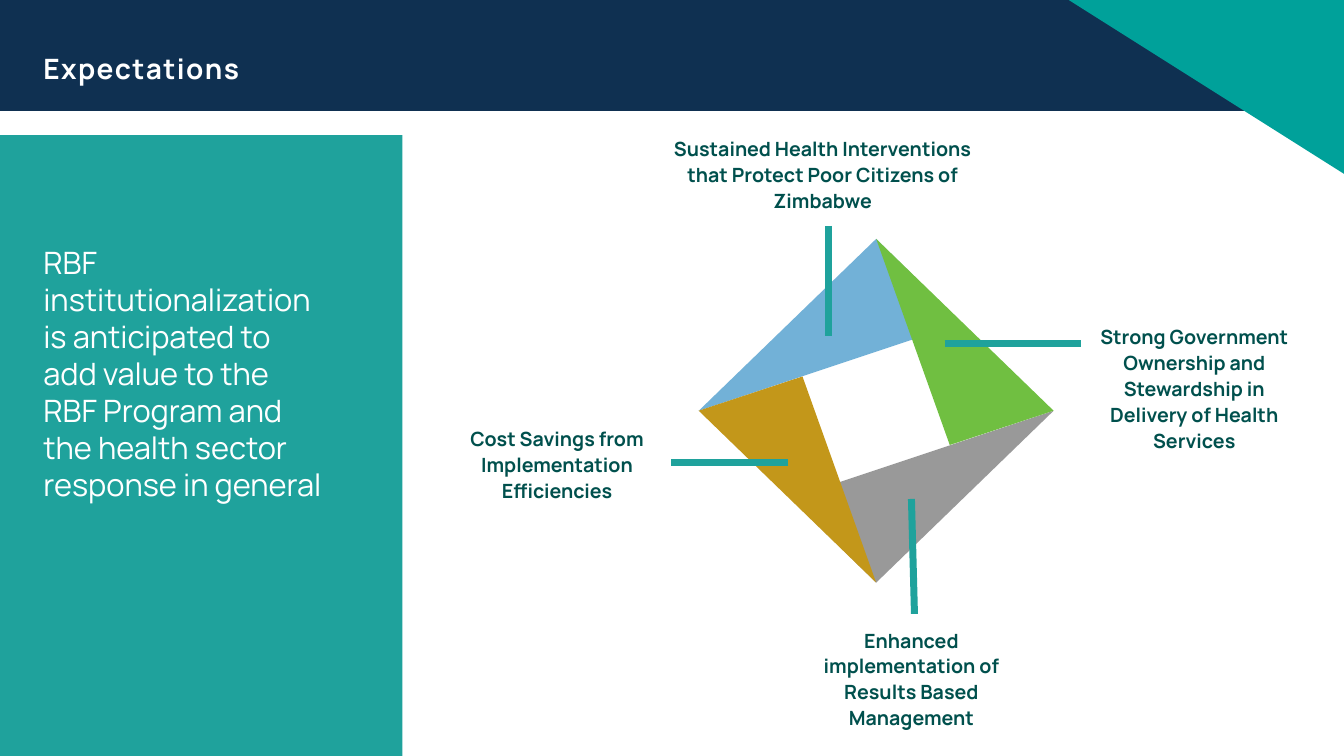
from dataclasses import dataclass

from lxml.etree import SubElement
from pptx import Presentation
from pptx.dml.color import RGBColor
from pptx.enum.shapes import MSO_CONNECTOR, MSO_SHAPE
from pptx.enum.text import MSO_ANCHOR, PP_ALIGN
from pptx.oxml.ns import qn
from pptx.util import Inches, Pt


@dataclass(frozen=True)
class Theme:
    font: str = "Manrope"
    navy: str = "0F3051"
    corner: str = "00A19A"
    teal: str = "1FA29C"
    ink: str = "00504D"
    white: str = "FFFFFF"
    gray: str = "999999"
    blue: str = "72B1D7"
    gold: str = "C3971A"
    green: str = "70BF41"
    title: int = 20
    body: int = 22
    label: int = 14
    rule: int = 5


THEME = Theme()


def paint(shape, color):
    shape.shadow.inherit = False
    shape.fill.solid()
    shape.fill.fore_color.rgb = RGBColor.from_string(color)
    shape.line.fill.background()


def block(slide, kind, box, color):
    shape = slide.shapes.add_shape(kind, *map(Inches, box))
    paint(shape, color)
    return shape


def write(slide, box, text, size, color, bold=False, anchor=MSO_ANCHOR.TOP):
    """Add a text box without margins; return its paragraph and run."""
    frame = slide.shapes.add_textbox(*map(Inches, box)).text_frame
    frame.word_wrap = True
    frame.vertical_anchor = anchor
    frame.margin_left = frame.margin_right = 0
    frame.margin_top = frame.margin_bottom = 0
    para = frame.paragraphs[0]
    run = para.add_run()
    run.text = text
    font = run.font
    font.name, font.size, font.bold = THEME.font, Pt(size), bold
    font.color.rgb = RGBColor.from_string(color)
    return para, run


def header(slide, box):
    left, top, width, height = box
    block(slide, MSO_SHAPE.RECTANGLE, box, THEME.navy)
    wide = 2.77
    corner = block(slide, MSO_SHAPE.ISOSCELES_TRIANGLE,
                   (left + width + 0.04 - wide, top, wide, 1.75), THEME.corner)
    corner.adjustments[0] = 0
    corner.rotation = 180
    _, run = write(slide, (left + 0.43, top + 0.5, 10.1, 0.34), "Expectations",
                   THEME.title, THEME.white, True, MSO_ANCHOR.BOTTOM)
    run._r.get_or_add_rPr().set("spc", "100")


def panel(slide, box):
    left, top, _, _ = box
    block(slide, MSO_SHAPE.RECTANGLE, box, THEME.teal)
    write(slide, (left + 0.43, top + 1.08, 2.83, 2.96),
          "RBF institutionalization is anticipated to add value to the "
          "RBF Program and the health sector response in general",
          THEME.body, THEME.white)


def blade(slide, points, color):
    start, *rest = [(Inches(x), Inches(y)) for x, y in points]
    form = slide.shapes.build_freeform(*start, scale=1.0)
    form.add_line_segments(rest, close=True)
    paint(form.convert_to_shape(), color)


def pinwheel(slide, box):
    """Draw four blades, each spanning two tips of a diamond."""
    left, top, width, height = box
    midx, midy = left + width / 2, top + height / 2
    north, south = (midx, top), (midx, top + height)
    west, east = (left, midy), (left + width, midy)
    # Offset of each blade's inner point from the centre
    blades = [
        (south, east, (-0.85, 0.87), THEME.gray),
        (north, west, (0.85, -0.87), THEME.blue),
        (west, south, (-0.73, -0.34), THEME.gold),
        (north, east, (0.73, 0.34), THEME.green),
    ]
    for one, two, (dx, dy), color in blades:
        blade(slide, (one, two, (midx + dx, midy + dy)), color)


def pointer(slide, start, end):
    line = slide.shapes.add_connector(
        MSO_CONNECTOR.STRAIGHT, *map(Inches, start + end))
    line.line.color.rgb = RGBColor.from_string(THEME.teal)
    line.line.width = Pt(THEME.rule)
    SubElement(line._element.spPr, qn("a:effectLst"))


def label(slide, box, text):
    para, _ = write(slide, box, text, THEME.label, THEME.ink, True,
                    MSO_ANCHOR.MIDDLE)
    para.alignment = PP_ALIGN.CENTER
    para.line_spacing = 1.1
    para.space_before = Pt(15)


def diagram(slide, box):
    left, top, _, _ = box
    pinwheel(slide, (left + 2.63, top + 1.03, 3.52, 3.41))
    # Label box, pointer start, pointer end, wording
    items = [
        ((2.36, 0, 3, 0.77), (3.92, 0.9), (3.92, 1.99),
         "Sustained Health Interventions that Protect Poor Citizens of Zimbabwe"),
        ((6.54, 1.86, 2.01, 1.29), (5.07, 2.07), (6.42, 2.07),
         "Strong Government Ownership and Stewardship in Delivery of Health Services"),
        ((3.56, 4.87, 2.36, 1.03), (4.77, 4.75), (4.74, 3.61),
         "Enhanced implementation of Results Based Management"),
        ((0, 2.87, 2.45, 0.77), (3.52, 3.25), (2.36, 3.25),
         "Cost Savings from Implementation Efficiencies"),
    ]
    for (x, y, wide, high), start, end, text in items:
        pointer(slide, (left + start[0], top + start[1]),
                (left + end[0], top + end[1]))
        label(slide, (left + x, top + y, wide, high), text)


def main():
    deck = Presentation()
    deck.slide_width, deck.slide_height = Inches(13.33), Inches(7.5)
    slide = deck.slides.add_slide(deck.slide_layouts[6])
    header(slide, (0, 0, 13.33, 1.1))
    diagram(slide, (4.3, 1.34, 8.55, 5.9))
    panel(slide, (0, 1.34, 3.99, 6.16))
    deck.save("out.pptx")


if __name__ == "__main__":
    main()
